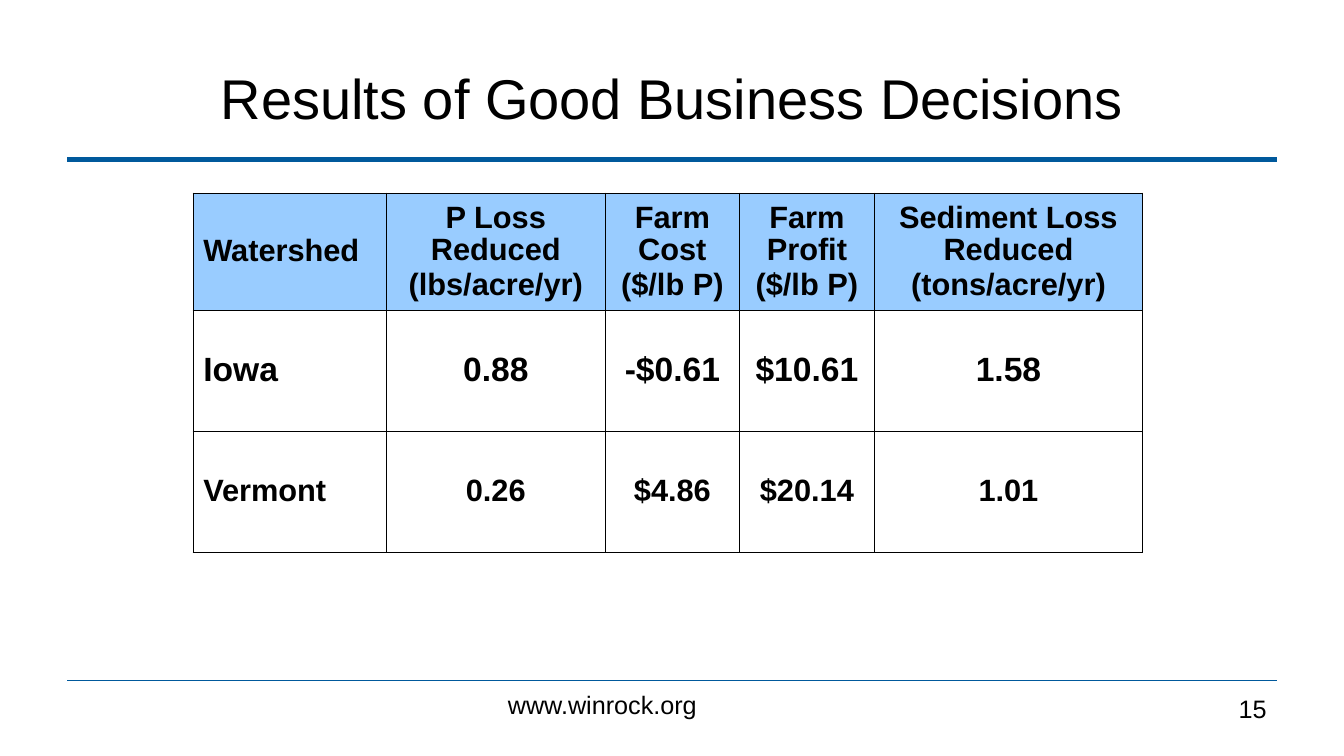
from dataclasses import dataclass

from lxml.etree import SubElement
from pptx import Presentation
from pptx.dml.color import RGBColor
from pptx.enum.shapes import MSO_CONNECTOR
from pptx.enum.text import MSO_ANCHOR, MSO_AUTO_SIZE, PP_ALIGN
from pptx.oxml import parse_xml
from pptx.oxml.ns import nsdecls, qn
from pptx.util import Cm, Pt


@dataclass(frozen=True)
class Theme:
    """Colours, typeface and type sizes of the deck."""
    text: str = "000000"
    rule: str = "00599C"
    header: str = "99CCFF"
    body: str = "FFFFFF"
    border: str = "000000"
    face: str = "Arial"
    title_size: int = 40
    header_size: int = 22
    row_sizes: tuple = (24, 22)
    footer_size: int = 18


@dataclass(frozen=True)
class Box:
    """A region of the slide in centimetres."""
    left: float
    top: float
    width: float
    height: float


THEME = Theme()
COLUMN_WIDTHS = (4.87, 5.51, 3.39, 3.39, 6.77)
ROW_HEIGHTS = (2.95, 3.05, 3.05)
HEADINGS = (
    ("Watershed",),
    ("P Loss Reduced", "(lbs/acre/yr)"),
    ("Farm Cost", "($/lb P)"),
    ("Farm Profit", "($/lb P)"),
    ("Sediment Loss Reduced", "(tons/acre/yr)"),
)
RESULTS = (
    ("Iowa", "0.88", "-$0.61", "$10.61", "1.58"),
    ("Vermont", "0.26", "$4.86", "$20.14", "1.01"),
)


def apply_format(target, formats):
    """Set every attribute in formats on the target."""
    for attribute, value in formats.items():
        setattr(target, attribute, value)


def write_lines(frame, lines, size, align, bold=False, first_spacing=1.0):
    """Fill a text frame with one paragraph per line."""
    for index, line in enumerate(lines):
        paragraph = frame.add_paragraph() if index else frame.paragraphs[0]
        paragraph.text = line
        apply_format(paragraph, {
            "alignment": align,
            "line_spacing": 1.0 if index else first_spacing,
        })
        apply_format(paragraph.font, {"name": THEME.face, "size": Pt(size), "bold": bold})
        paragraph.font.color.rgb = RGBColor.from_string(THEME.text)


def add_rule(slide, left, top, width, weight):
    """Draw a horizontal rule."""
    rule = slide.shapes.add_connector(
        MSO_CONNECTOR.STRAIGHT, Cm(left), Cm(top), Cm(left + width), Cm(top))
    rule.line.color.rgb = RGBColor.from_string(THEME.rule)
    rule.line.width = Pt(weight)
    SubElement(rule._element.spPr, qn("a:effectLst"))


def add_title(slide, box):
    """Place the title with its rule along the bottom of the box."""
    add_rule(slide, box.left, box.top + box.height, box.width, 3)
    title = slide.shapes.title
    inset = 2.54
    apply_format(title, {
        "left": Cm(box.left + inset), "top": Cm(box.top),
        "width": Cm(box.width - 2 * inset), "height": Cm(box.height),
    })
    apply_format(title.text_frame, {
        "word_wrap": True,
        "auto_size": MSO_AUTO_SIZE.NONE,
        "vertical_anchor": MSO_ANCHOR.MIDDLE,
    })
    write_lines(title.text_frame, ["Results of Good Business Decisions"],
                THEME.title_size, PP_ALIGN.CENTER)


def add_borders(cell):
    """Outline all four sides of a cell."""
    properties = cell._tc.get_or_add_tcPr()
    for side in "LRTB":
        properties.append(parse_xml(
            f'<a:ln{side} {nsdecls("a")} w="{Pt(1)}"><a:solidFill>'
            f'<a:srgbClr val="{THEME.border}"/></a:solidFill></a:ln{side}>'))


def add_results(slide, box):
    """Place the table of watershed results in the box."""
    rows = [HEADINGS, *([(value,) for value in result] for result in RESULTS)]
    sizes = (THEME.header_size, *THEME.row_sizes)
    results = slide.shapes.add_table(
        len(rows), len(COLUMN_WIDTHS),
        Cm(box.left), Cm(box.top), Cm(box.width), Cm(box.height)).table
    apply_format(results, {"first_row": False, "horz_banding": False})
    for column, width in zip(results.columns, COLUMN_WIDTHS):
        column.width = Cm(width)
    for row_index, (row, entries, height, size) in enumerate(
            zip(results.rows, rows, ROW_HEIGHTS, sizes)):
        row.height = Cm(height)
        fill_colour = THEME.body if row_index else THEME.header
        for column_index, (cell, lines) in enumerate(zip(row.cells, entries)):
            add_borders(cell)
            cell.fill.solid()
            cell.fill.fore_color.rgb = RGBColor.from_string(fill_colour)
            cell.vertical_anchor = MSO_ANCHOR.MIDDLE
            align = PP_ALIGN.CENTER if column_index else PP_ALIGN.LEFT
            write_lines(cell.text_frame, lines, size, align, True, 0.95)


def add_footer(slide, box):
    """Place the footer rule, web address and page number in the box."""
    add_rule(slide, box.left, box.top, box.width, 0.75)
    number_width = 7.9
    entries = (
        ("www.winrock.org", 10.86, 0.1, 10.72, PP_ALIGN.LEFT),
        ("15", box.width - number_width, 0.2, number_width, PP_ALIGN.RIGHT),
    )
    for wording, offset, drop, width, align in entries:
        entry = slide.shapes.add_textbox(
            Cm(box.left + offset), Cm(box.top + drop), Cm(width), Cm(1.32))
        entry.text_frame.word_wrap = True
        write_lines(entry.text_frame, [wording], THEME.footer_size, align)


def main():
    """Build the slide and save it."""
    deck = Presentation()
    apply_format(deck, {"slide_width": Cm(33.87), "slide_height": Cm(19.05)})
    slide = deck.slides.add_slide(deck.slide_layouts[5])
    add_title(slide, Box(1.69, 0.85, 30.48, 3.17))
    add_results(slide, Box(4.87, 4.87, sum(COLUMN_WIDTHS), sum(ROW_HEIGHTS)))
    add_footer(slide, Box(1.69, 17.15, 30.48, 1.52))
    deck.save("out.pptx")


if __name__ == "__main__":
    main()
